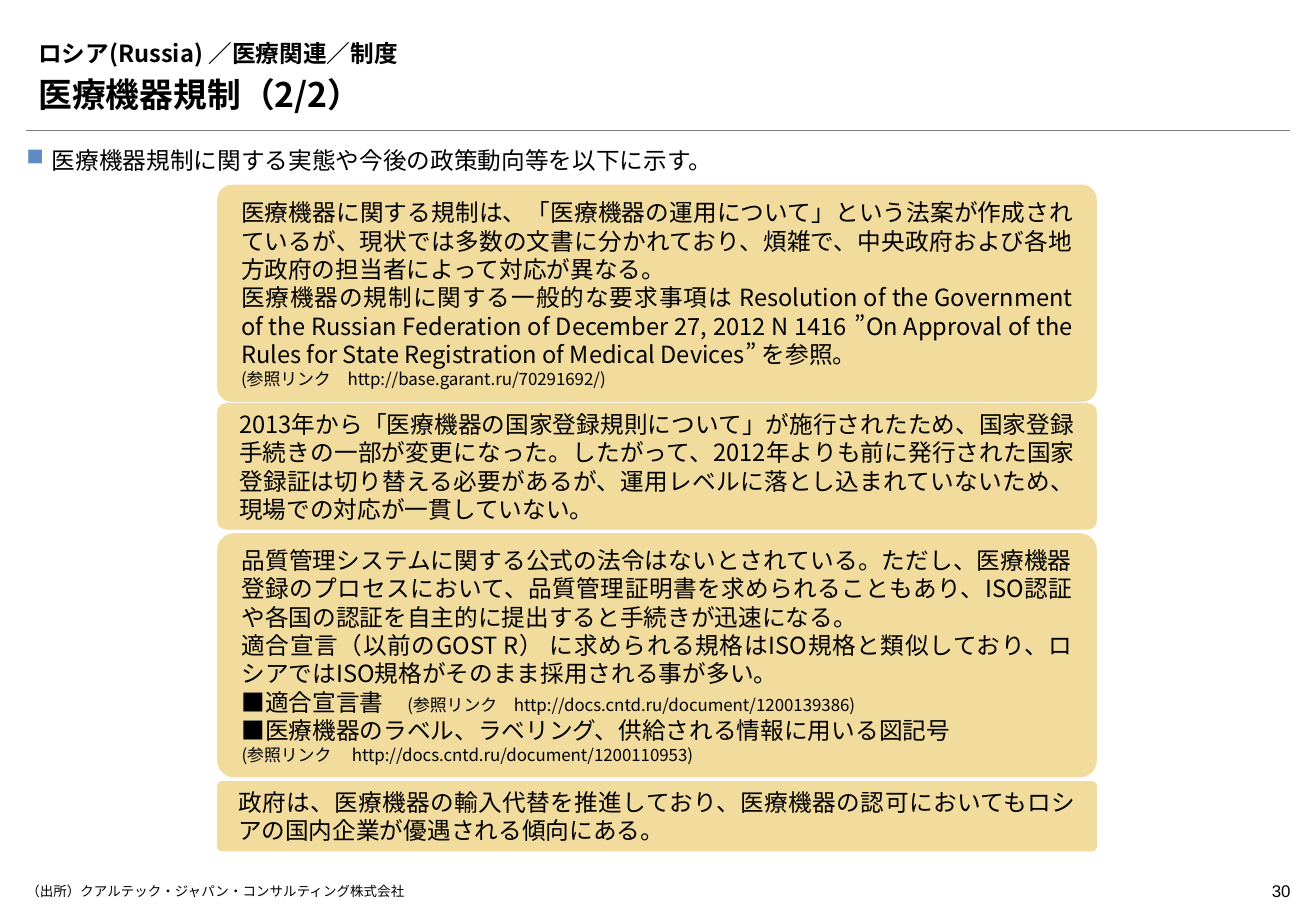
"""Build the slide on medical device rules in Russia."""
from lxml import etree
from pptx import Presentation
from pptx import util as u
from pptx.dml.color import RGBColor
from pptx.enum import lang, shapes, text
from pptx.oxml import ns

HUES = {"ink": "000000", "rule": "7F7F7F", "sand": "F1DB9D", "mark": "5F8AC3"}
SANS = "Noto Sans CJK JP"
LEFT, SPAN = 2, 96
JUST, START, END = text.PP_ALIGN.JUSTIFY, text.PP_ALIGN.LEFT, text.PP_ALIGN.RIGHT
MID, LOW, TOP = text.MSO_ANCHOR.MIDDLE, text.MSO_ANCHOR.BOTTOM, text.MSO_ANCHOR.TOP

deck = Presentation()
deck.slide_width, deck.slide_height = u.Inches(10.83), u.Inches(7.5)
slide = deck.slides.add_slide(deck.slide_layouts[6])


def place(x, y, w, h):
    """Turn percent shares of the slide into lengths."""
    wide, high = deck.slide_width / 100, deck.slide_height / 100
    return [int(n) for n in (x * wide, y * high, w * wide, h * high)]


def write(shape, paras, anchor, pad, lead=None, bold=False, face=SANS):
    """Fill a shape with paragraphs of (alignment, runs)."""
    frame = shape.text_frame
    frame.word_wrap = True
    frame.vertical_anchor = anchor
    frame.margin_left = frame.margin_right = u.Inches(pad[0])
    frame.margin_top = frame.margin_bottom = u.Inches(pad[1])
    for i, (align, runs) in enumerate(paras):
        para = frame.add_paragraph() if i else frame.paragraphs[0]
        para.alignment = align
        if lead:
            para.line_spacing = u.Pt(lead * max(size for _, size in runs))
        for words, size in runs:
            run = para.add_run()
            run.text = words
            font = run.font
            font.size, font.bold, font.name = u.Pt(size), bold, face
            font.language_id = lang.MSO_LANGUAGE_ID.JAPANESE
            font.color.rgb = RGBColor.from_string(HUES["ink"])
            kanji = etree.SubElement(run._r.get_or_add_rPr(), ns.qn("a:ea"))
            kanji.set("typeface", face)


x, y, w, _ = place(LEFT, 14.27, SPAN, 0)
rule = slide.shapes.add_connector(shapes.MSO_CONNECTOR.STRAIGHT, x, y, x + w, y)
rule.line.color.rgb = RGBColor.from_string(HUES["rule"])
rule.line.width = u.Pt(0.25)
etree.SubElement(rule._element.spPr, ns.qn("a:effectLst"))

for top, words, size in [
    (2.8, "ロシア(Russia) ／医療関連／制度", 14),
    (8, "医療機器規制（2/2）", 20),
]:
    head = slide.shapes.add_textbox(*place(LEFT, top, SPAN, 5.2))
    write(head, [(START, [(words, size)])], LOW, (0.1, 0.05), bold=True)

lede = slide.shapes.add_textbox(*place(LEFT, 15.73, SPAN, 3.07))
pr = lede.text_frame.paragraphs[0]._p.get_or_add_pPr()
pr.set("marL", str(u.Inches(0.21)))
pr.set("indent", str(-u.Inches(0.21)))
tint = etree.SubElement(etree.SubElement(pr, ns.qn("a:buClr")), ns.qn("a:srgbClr"))
tint.set("val", HUES["mark"])
etree.SubElement(pr, ns.qn("a:buChar")).set("char", "■")
write(lede, [(JUST, [("医療機器規制に関する実態や今後の政策動向等を以下に示す。", 14)])],
      TOP, (0, 0), lead=1.32)

cards = [
    (20.27, 23.87, [
        (JUST, [("医療機器に関する規制は、「医療機器の運用について」という法案が作成されているが、"
                 "現状では多数の文書に分かれており、煩雑で、中央政府および各地方政府の担当者によって"
                 "対応が異なる。", 14)]),
        (JUST, [("医療機器の規制に関する一般的な要求事項は Resolution of the Government of the "
                 "Russian Federation of December 27, 2012 N 1416 ”On Approval of the Rules "
                 "for State Registration of Medical Devices” を参照。", 14)]),
        (JUST, [("(参照リンク　http://base.garant.ru/70291692/)", 10)]),
    ]),
    (44.27, 13.87, [
        (JUST, [("2013年から「医療機器の国家登録規則について」が施行されたため、国家登録手続きの"
                 "一部が変更になった。したがって、2012年よりも前に発行された国家登録証は切り替える"
                 "必要があるが、運用レベルに落とし込まれていないため、現場での対応が一貫していない。",
                 14)]),
    ]),
    (58.53, 26.8, [
        (JUST, [("品質管理システムに関する公式の法令はないとされている。ただし、医療機器登録の"
                 "プロセスにおいて、品質管理証明書を求められることもあり、ISO認証や各国の認証を"
                 "自主的に提出すると手続きが迅速になる。", 14)]),
        (JUST, [("適合宣言（以前のGOST R） に求められる規格はISO規格と類似しており、"
                 "ロシアではISO規格がそのまま採用される事が多い。", 14)]),
        (START, [("■適合宣言書　", 14),
                 ("(参照リンク　http://docs.cntd.ru/document/1200139386)", 10)]),
        (START, [("■医療機器のラベル、ラベリング、供給される情報に用いる図記号", 14)]),
        (START, [("(参照リンク 　http://docs.cntd.ru/document/1200110953)", 10)]),
    ]),
    (85.73, 7.73, [
        (JUST, [("政府は、医療機器の輸入代替を推進しており、医療機器の認可においても"
                 "ロシアの国内企業が優遇される傾向にある。", 14)]),
    ]),
]
for top, high, paras in cards:
    card = slide.shapes.add_shape(shapes.MSO_SHAPE.ROUNDED_RECTANGLE,
                                  *place(16.5, top, 66.85, high))
    card.adjustments[0] = 0.07
    card.shadow.inherit = False
    card.fill.solid()
    card.fill.fore_color.rgb = RGBColor.from_string(HUES["sand"])
    card.line.fill.background()
    write(card, paras, MID, (0.16, 0.05), lead=1.2)

credit = slide.shapes.add_textbox(*place(LEFT, 96.93, 87.26, 2.13))
write(credit, [(START, [("（出所）クアルテック・ジャパン・コンサルティング株式会社", 8)])],
      TOP, (0, 0), lead=1.2)
page = slide.shapes.add_textbox(*place(90.77, 96, 7.29, 3.6))
write(page, [(END, [("30", 10)])], TOP, (0, 0.05), face="Arial")

deck.save("out.pptx")
